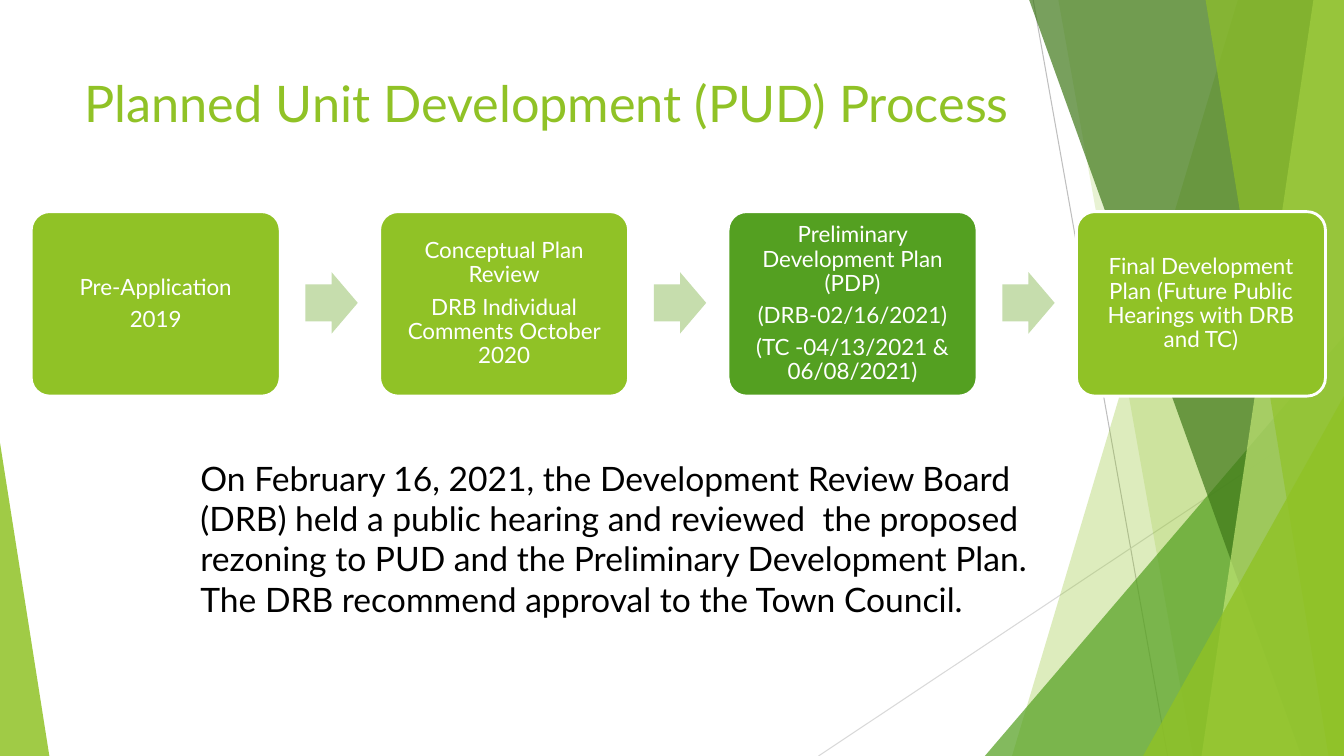
from dataclasses import dataclass

import pptx
import pptx.dml.color
import pptx.enum.shapes
import pptx.enum.text
import pptx.oxml
import pptx.oxml.ns
import pptx.util

COLUMNS, ROWS = 80, 45
SLIDE_WIDTH = pptx.util.Inches(13.33)
SLIDE_HEIGHT = pptx.util.Inches(7.5)
FONT = "Lato"
LIME, GREEN, WHITE = "90C226", "54A021", "FFFFFF"
STEP_PITCH = 20.74
ARROW_OFFSET = 16.32
PRESET = pptx.enum.shapes.MSO_SHAPE
ALIGN = pptx.enum.text.PP_ALIGN
ANCHOR = pptx.enum.text.MSO_ANCHOR


@dataclass(frozen=True)
class Area:
    column: float
    row: float
    columns: float
    rows: float


@dataclass(frozen=True)
class Ray:
    start: tuple[float, float]
    end: tuple[float, float]
    color: str


@dataclass(frozen=True)
class Facet:
    top_column: float
    bottom_column: float
    color: str
    opacity: int


@dataclass(frozen=True)
class Wedge:
    area: Area
    apex: float
    color: str
    opacity: int


@dataclass(frozen=True)
class Step:
    lines: tuple[str, ...]
    color: str = LIME


RAYS = [
    Ray((61.5, 0), (69.5, 45), "BFBFBF"),
    Ray((80, 24.18), (48.72, 45), "D9D9D9"),
]
DECORATION = [
    Facet(73.68, 60.24, LIME, 30),
    Facet(63, 71, LIME, 20),
    Wedge(Area(58.62, 20, 21.38, 25), 1, GREEN, 72),
    Facet(61.26, 77.46, "3F7819", 70),
    Facet(78.18, 71.52, "C0E474", 70),
    Facet(71.76, 79.08, LIME, 65),
    Wedge(Area(68.04, 23.58, 11.96, 21.42), 1, LIME, 80),
    Wedge(Area(0, 26.34, 2.94, 18.66), 0, LIME, 85),
]
STEPS = [
    Step(("Pre-Application", "2019")),
    Step(("Conceptual Plan Review", "DRB Individual Comments October 2020")),
    Step(
        (
            "Preliminary Development Plan (PDP)",
            "(DRB-02/16/2021)",
            "(TC -04/13/2021 & 06/08/2021)",
        ),
        GREEN,
    ),
    Step(("Final Development Plan (Future Public Hearings with DRB and TC)",)),
]
SUMMARY = (
    "On February 16, 2021, the Development Review Board (DRB) held a public "
    "hearing and reviewed  the proposed rezoning to PUD and the Preliminary "
    "Development Plan. The DRB recommend approval to the Town Council."
)


def across(columns: float) -> int:
    return round(SLIDE_WIDTH * columns / COLUMNS)


def down(rows: float) -> int:
    return round(SLIDE_HEIGHT * rows / ROWS)


def box(area: Area) -> tuple[int, int, int, int]:
    return across(area.column), down(area.row), across(area.columns), down(area.rows)


def rgb(color: str) -> pptx.dml.color.RGBColor:
    return pptx.dml.color.RGBColor.from_string(color)


def paint(shape, color: str, opacity: int = 100) -> None:
    shape.shadow.inherit = False
    shape.line.fill.background()
    shape.fill.solid()
    shape.fill.fore_color.rgb = rgb(color)
    if opacity < 100:
        tint = shape.fill._xPr.find(".//" + pptx.oxml.ns.qn("a:srgbClr"))
        alpha = pptx.oxml.parse_xml(
            f'<a:alpha {pptx.oxml.ns.nsdecls("a")} val="{opacity * 1000}"/>'
        )
        tint.append(alpha)


def write(frame, lines: tuple[str, ...], size: int, color: str, align: ALIGN) -> None:
    frame.word_wrap = True
    frame.text = "\n".join(lines)
    for paragraph in frame.paragraphs:
        paragraph.alignment = align
        paragraph.font.name = FONT
        paragraph.font.size = pptx.util.Pt(size)
        paragraph.font.color.rgb = rgb(color)


def draw_ray(shapes, ray: Ray) -> None:
    (start_column, start_row), (end_column, end_row) = ray.start, ray.end
    connector = shapes.add_connector(
        pptx.enum.shapes.MSO_CONNECTOR.STRAIGHT,
        across(start_column), down(start_row), across(end_column), down(end_row),
    )
    connector.line.color.rgb = rgb(ray.color)
    connector.line.width = pptx.util.Pt(0.75)
    connector._element.spPr.append(
        pptx.oxml.parse_xml(f'<a:effectLst {pptx.oxml.ns.nsdecls("a")}/>')
    )


def draw_facet(shapes, facet: Facet) -> None:
    outline = shapes.build_freeform(across(facet.top_column), 0)
    outline.add_line_segments(
        [
            (SLIDE_WIDTH, 0),
            (SLIDE_WIDTH, SLIDE_HEIGHT),
            (across(facet.bottom_column), SLIDE_HEIGHT),
        ]
    )
    paint(outline.convert_to_shape(), facet.color, facet.opacity)


def draw_wedge(shapes, wedge: Wedge) -> None:
    triangle = shapes.add_shape(PRESET.ISOSCELES_TRIANGLE, *box(wedge.area))
    triangle.adjustments[0] = wedge.apex
    paint(triangle, wedge.color, wedge.opacity)


def draw_step(shapes, step: Step, column: float) -> None:
    card = shapes.add_shape(
        PRESET.ROUNDED_RECTANGLE, *box(Area(column, 12.6, 14.82, 10.98))
    )
    card.adjustments[0] = 0.1
    paint(card, step.color)
    card.line.color.rgb = rgb(WHITE)
    card.line.width = pptx.util.Pt(2)
    frame = card.text_frame
    frame.margin_left = frame.margin_right = across(0.72)
    frame.margin_top = frame.margin_bottom = down(0.72)
    frame.vertical_anchor = ANCHOR.MIDDLE
    write(frame, step.lines, 16, WHITE, ALIGN.CENTER)
    for paragraph in frame.paragraphs:
        paragraph.line_spacing = 0.9
        paragraph.space_after = pptx.util.Pt(5.6)


def draw_arrow(shapes, column: float) -> None:
    arrow = shapes.add_shape(PRESET.RIGHT_ARROW, *box(Area(column, 16.2, 3.12, 3.66)))
    arrow.adjustments[0] = 0.6
    arrow.adjustments[1] = 0.5
    paint(arrow, "C6DDAD")


def main() -> None:
    deck = pptx.Presentation()
    deck.slide_width, deck.slide_height = SLIDE_WIDTH, SLIDE_HEIGHT
    slide = deck.slides.add_slide(deck.slide_layouts.get_by_name("Title Only"))
    shapes = slide.shapes

    for ray in RAYS:
        draw_ray(shapes, ray)
    for piece in DECORATION:
        if isinstance(piece, Facet):
            draw_facet(shapes, piece)
        else:
            draw_wedge(shapes, piece)

    title = shapes.title
    title.left, title.top, title.width, title.height = box(Area(4.44, 4, 56.4, 8.64))
    title.text_frame.vertical_anchor = ANCHOR.TOP
    title.text_frame.auto_size = pptx.enum.text.MSO_AUTO_SIZE.NONE
    write(title.text_frame, ("Planned Unit Development (PUD) Process",), 36, LIME, ALIGN.LEFT)

    for index, step in enumerate(STEPS):
        column = 1.86 + index * STEP_PITCH
        draw_step(shapes, step, column)
        if index < len(STEPS) - 1:
            draw_arrow(shapes, column + ARROW_OFFSET)

    summary = shapes.add_textbox(*box(Area(11.34, 26.94, 51.42, 12.72)))
    write(summary.text_frame, (SUMMARY,), 24, "000000", ALIGN.LEFT)
    deck.save("out.pptx")


if __name__ == "__main__":
    main()
